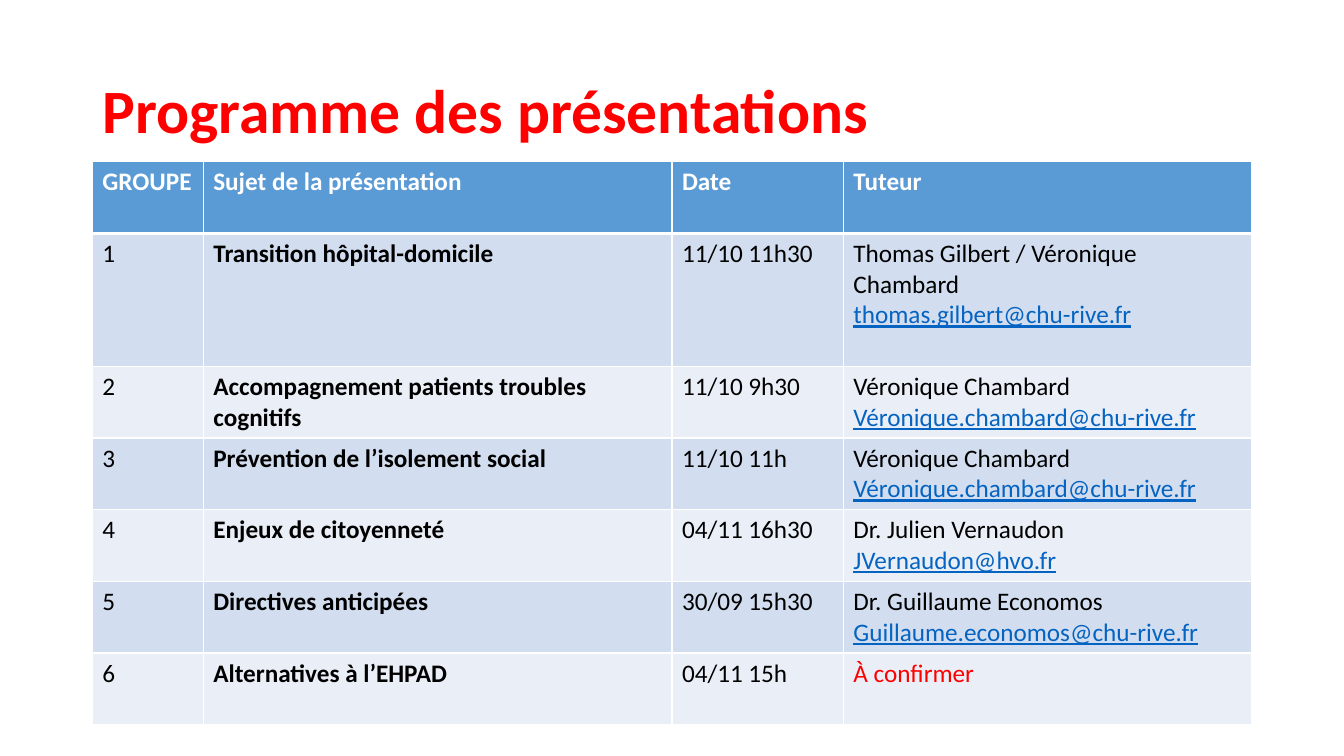
"""Build the slide listing the programme of presentations as a table."""
from dataclasses import dataclass

import lxml.etree
import pptx
import pptx.dml.color
import pptx.enum.text
import pptx.oxml.ns
import pptx.table
import pptx.text.text
import pptx.util

COLOURS = {
    "white": "FFFFFF",
    "black": "000000",
    "red": "FF0000",
    "email": "0563C1",
    "header": "5B9BD5",
    "odd": "D2DEEF",
    "even": "EAEFF7",
}
FONT = "Calibri"
HEADINGS = ("GROUPE", "Sujet de la présentation", "Date", "Tuteur")
COLUMN_WIDTHS = (79.2, 334.8, 122.4, 291.6)
ROW_HEIGHT = 51.2
FIRST_SESSION_HEIGHT = 95


@dataclass(frozen=True)
class Line:
    """One line of text with its look."""

    text: str
    colour: str = "black"
    bold: bool = False
    underline: bool = False
    size: float = 18


@dataclass(frozen=True)
class Session:
    """One presentation of the programme."""

    subject: str
    date: str
    tutor: Line
    email: str = ""


SESSIONS = (
    Session("Transition hôpital-domicile", "11/10 11h30",
            Line("Thomas Gilbert / Véronique Chambard"), "thomas.gilbert@chu-rive.fr"),
    Session("Accompagnement patients troubles cognitifs", "11/10 9h30",
            Line("Véronique Chambard"), "Véronique.chambard@chu-rive.fr"),
    Session("Prévention de l’isolement social", "11/10 11h",
            Line("Véronique Chambard"), "Véronique.chambard@chu-rive.fr"),
    Session("Enjeux de citoyenneté", "04/11 16h30",
            Line("Dr. Julien Vernaudon"), "JVernaudon@hvo.fr"),
    Session("Directives anticipées", "30/09 15h30",
            Line("Dr. Guillaume Economos"), "Guillaume.economos@chu-rive.fr"),
    Session("Alternatives à l’EHPAD", "04/11 15h", Line("À confirmer", "red")),
)


def rgb(colour: str) -> pptx.dml.color.RGBColor:
    """Return the named colour."""
    return pptx.dml.color.RGBColor.from_string(COLOURS[colour])


def write_lines(frame: pptx.text.text.TextFrame, lines: list[Line]) -> None:
    """Write each line as a paragraph of one run."""
    for index, line in enumerate(lines):
        paragraph = frame.paragraphs[0] if index == 0 else frame.add_paragraph()
        paragraph.alignment = pptx.enum.text.PP_ALIGN.LEFT
        run = paragraph.add_run()
        run.text = line.text
        run.font.name = FONT
        run.font.size = pptx.util.Pt(line.size)
        run.font.bold = line.bold
        run.font.underline = line.underline
        run.font.color.rgb = rgb(line.colour)


def draw_border(cell: pptx.table._Cell, side: str, width: float) -> None:
    """Draw one white border of a cell."""
    qn = pptx.oxml.ns.qn
    properties = cell._tc.get_or_add_tcPr()
    border = lxml.etree.SubElement(properties, qn(f"a:ln{side}"), w=str(pptx.util.Pt(width)))
    fill = lxml.etree.SubElement(border, qn("a:solidFill"))
    lxml.etree.SubElement(fill, qn("a:srgbClr"), val=COLOURS["white"])


def fill_row(table: pptx.table.Table, row: int, contents: list[list[Line]], fill: str) -> None:
    """Fill and format one row of the table."""
    thick_side = {0: "B", 1: "T"}.get(row)
    for column, lines in enumerate(contents):
        cell = table.cell(row, column)
        for side in "LRTB":
            draw_border(cell, side, 3 if side == thick_side else 1)
        cell.fill.solid()
        cell.fill.fore_color.rgb = rgb(fill)
        write_lines(cell.text_frame, lines)


def session_contents(group: int, session: Session) -> list[list[Line]]:
    """Return the cell contents for one session."""
    tutor = [session.tutor]
    if session.email:
        tutor.append(Line(session.email, "email", underline=True))
    return [[Line(str(group))], [Line(session.subject, bold=True)], [Line(session.date)], tutor]


def main() -> None:
    """Create and save the presentation."""
    deck = pptx.Presentation()
    deck.slide_width = pptx.util.Pt(960)
    deck.slide_height = pptx.util.Pt(540)
    slide = deck.slides.add_slide(deck.slide_layouts[5])

    heading = slide.shapes.title
    heading.left, heading.top = pptx.util.Pt(66), pptx.util.Pt(28.8)
    heading.width, heading.height = pptx.util.Pt(828), pptx.util.Pt(104.4)
    heading.text_frame.vertical_anchor = pptx.enum.text.MSO_ANCHOR.MIDDLE
    write_lines(heading.text_frame, [Line("Programme des présentations", "red", True, size=44)])
    heading.text_frame.paragraphs[0].line_spacing = 0.9

    heights = [ROW_HEIGHT, FIRST_SESSION_HEIGHT] + [ROW_HEIGHT] * (len(SESSIONS) - 1)
    programme = slide.shapes.add_table(
        len(heights), len(HEADINGS), pptx.util.Pt(66), pptx.util.Pt(115.5),
        pptx.util.Pt(sum(COLUMN_WIDTHS)), pptx.util.Pt(sum(heights))).table
    for column, width in zip(programme.columns, COLUMN_WIDTHS):
        column.width = pptx.util.Pt(width)
    for row, height in zip(programme.rows, heights):
        row.height = pptx.util.Pt(height)

    fill_row(programme, 0, [[Line(text, "white", True)] for text in HEADINGS], "header")
    for group, session in enumerate(SESSIONS, start=1):
        fill_row(programme, group, session_contents(group, session),
                 "odd" if group % 2 else "even")

    deck.save("out.pptx")


if __name__ == "__main__":
    main()
